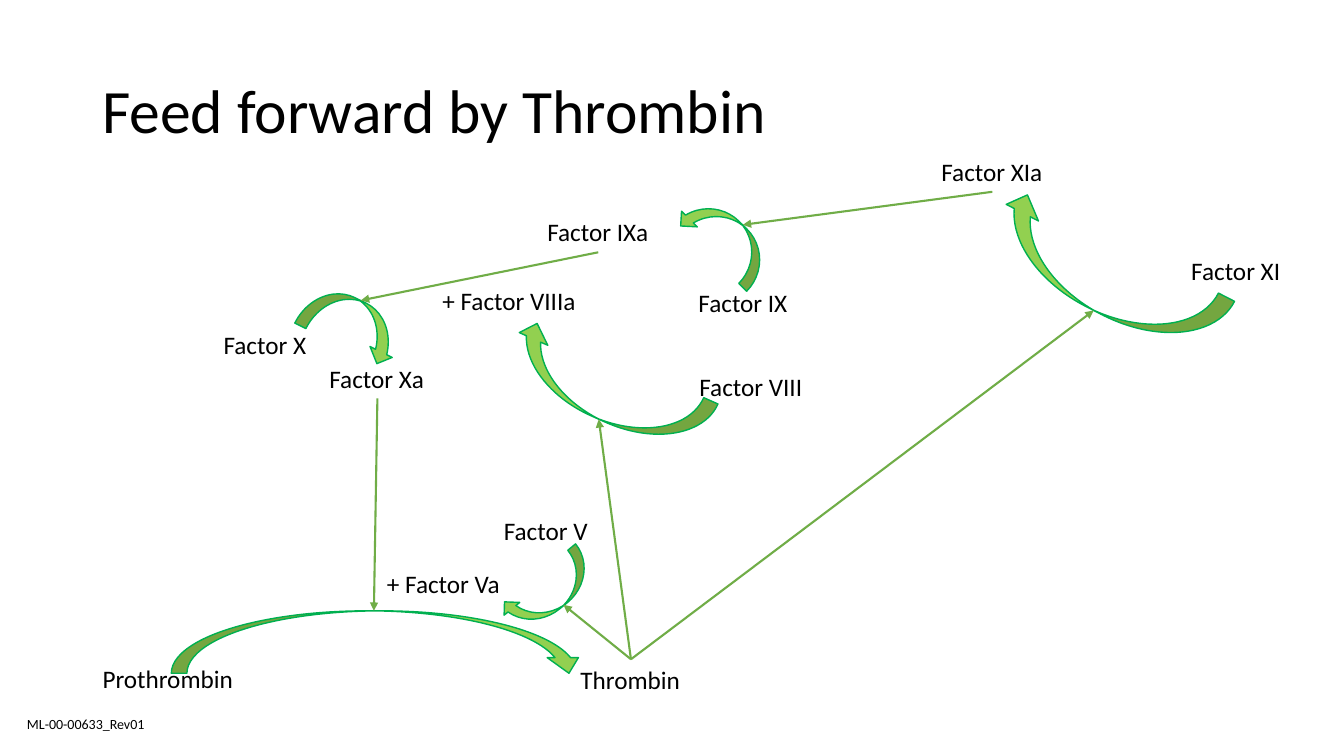
"""Builds a slide on how thrombin feeds forward into the clotting cascade."""
from lxml import etree
from pptx import Presentation
from pptx import util as u
from pptx.dml.color import RGBColor
from pptx.enum import shapes, text
from pptx.oxml import ns

BOTTOM, TOP = 2, 0
LABEL_HEIGHT = 29
DOWN = shapes.MSO_SHAPE.CURVED_DOWN_ARROW
UP = shapes.MSO_SHAPE.CURVED_UP_ARROW


class Deck:
    font = "Calibri"
    colors = {"ink": "000000", "curve": "92D050", "edge": "00B050", "link": "70AD47"}

    def __init__(self):
        self.prs = Presentation()
        self.prs.slide_width, self.prs.slide_height = u.Pt(960), u.Pt(540)
        self.slide = self.prs.slides.add_slide(self.prs.slide_layouts[6])

    def color(self, name):
        return RGBColor.from_string(self.colors[name])

    def label(self, words, left, top, width, height=LABEL_HEIGHT, size=18, wrap=False,
              anchor=text.MSO_ANCHOR.TOP, spacing=1.0, fit=True):
        box = self.slide.shapes.add_textbox(*map(u.Pt, (left, top, width, height)))
        frame = box.text_frame
        frame.word_wrap = wrap
        frame.vertical_anchor = anchor
        if fit:
            frame.auto_size = text.MSO_AUTO_SIZE.SHAPE_TO_FIT_TEXT
        line = frame.paragraphs[0]
        line.line_spacing = spacing
        run = line.add_run()
        run.text = words
        run.font.name, run.font.size = self.font, u.Pt(size)
        run.font.color.rgb = self.color("ink")
        return box

    def curve(self, kind, left, top, width, height, rotation=0, flip=False):
        arrow = self.slide.shapes.add_shape(kind, *map(u.Pt, (left, top, width, height)))
        arrow.rotation = rotation
        arrow.shadow.inherit = False
        arrow.fill.solid()
        arrow.fill.fore_color.rgb = self.color("curve")
        arrow.line.color.rgb = self.color("edge")
        arrow.line.width = u.Pt(1)
        if flip:
            arrow._element.spPr.find(ns.qn("a:xfrm")).set("flipV", "1")

    def link(self, source, side, x, y):
        link = self.slide.shapes.add_connector(
            shapes.MSO_CONNECTOR.STRAIGHT, 0, 0, u.Pt(x), u.Pt(y))
        link.begin_connect(source, side)
        link.line.color.rgb = self.color("link")
        link.line.width = u.Pt(1.5)
        outline = link._element.spPr.find(ns.qn("a:ln"))
        etree.SubElement(outline, ns.qn("a:tailEnd"), type="triangle")
        etree.SubElement(link._element.spPr, ns.qn("a:effectLst"))


def main():
    deck = Deck()
    deck.label("Feed forward by Thrombin", 66, 28.8, 828, 104.4, size=44, wrap=True,
               anchor=text.MSO_ANCHOR.MIDDLE, spacing=0.9, fit=False)

    activations = [
        (DOWN, 122.4, 436.3, 295.2, 44.6),
        (DOWN, 355.7, 408.2, 72.7, 28.8, 140.8),
        (UP, 214.6, 213.8, 74.2, 35.3, 26.3, True),
        (DOWN, 357.8, 255.6, 152.6, 44.6, 204),
        (UP, 481, 154.8, 74.2, 31.7, 224.7),
        (DOWN, 700.6, 171.4, 179.3, 51.8, 207.2),
    ]
    for activation in activations:
        deck.curve(*activation)

    factors = [
        ("Prothrombin", 66.2, 470.2, 116.6),
        ("Thrombin", 407.5, 470.9, 86.4),
        ("Factor Xa", 228.2, 255.6, 82.8),
        ("+ Factor Va", 269.3, 402.5, 95.8),
        ("Factor V", 352.8, 364.3, 74.9),
        ("Factor X", 152.6, 231.8, 74.2),
        ("Factor IXa", 383.8, 151.2, 87.1),
        ("+ Factor VIIIa", 308.9, 200.2, 110.9),
        ("Factor VIII", 492.5, 261.4, 88.6),
        ("Factor IX", 491.8, 201.6, 88.6),
        ("Factor XIa", 665.3, 108, 87.1),
        ("Factor XI", 843.8, 178.6, 78.5),
    ]
    labels = {name: deck.label(name, *place) for name, *place in factors}

    effects = [
        ("Factor Xa", BOTTOM, 267.1, 436.3),
        ("Factor IXa", BOTTOM, 257.8, 214.6),
        ("Factor XIa", BOTTOM, 530.6, 160.6),
        ("Thrombin", TOP, 402.5, 432),
        ("Thrombin", TOP, 427.7, 299.5),
        ("Thrombin", TOP, 781.2, 221.8),
    ]
    for name, *course in effects:
        deck.link(labels[name], *course)

    deck.label("ML-00-00633_Rev01", 12.2, 507.6, 100.1, 19.4, size=10)
    deck.prs.save("out.pptx")


if __name__ == "__main__":
    main()
